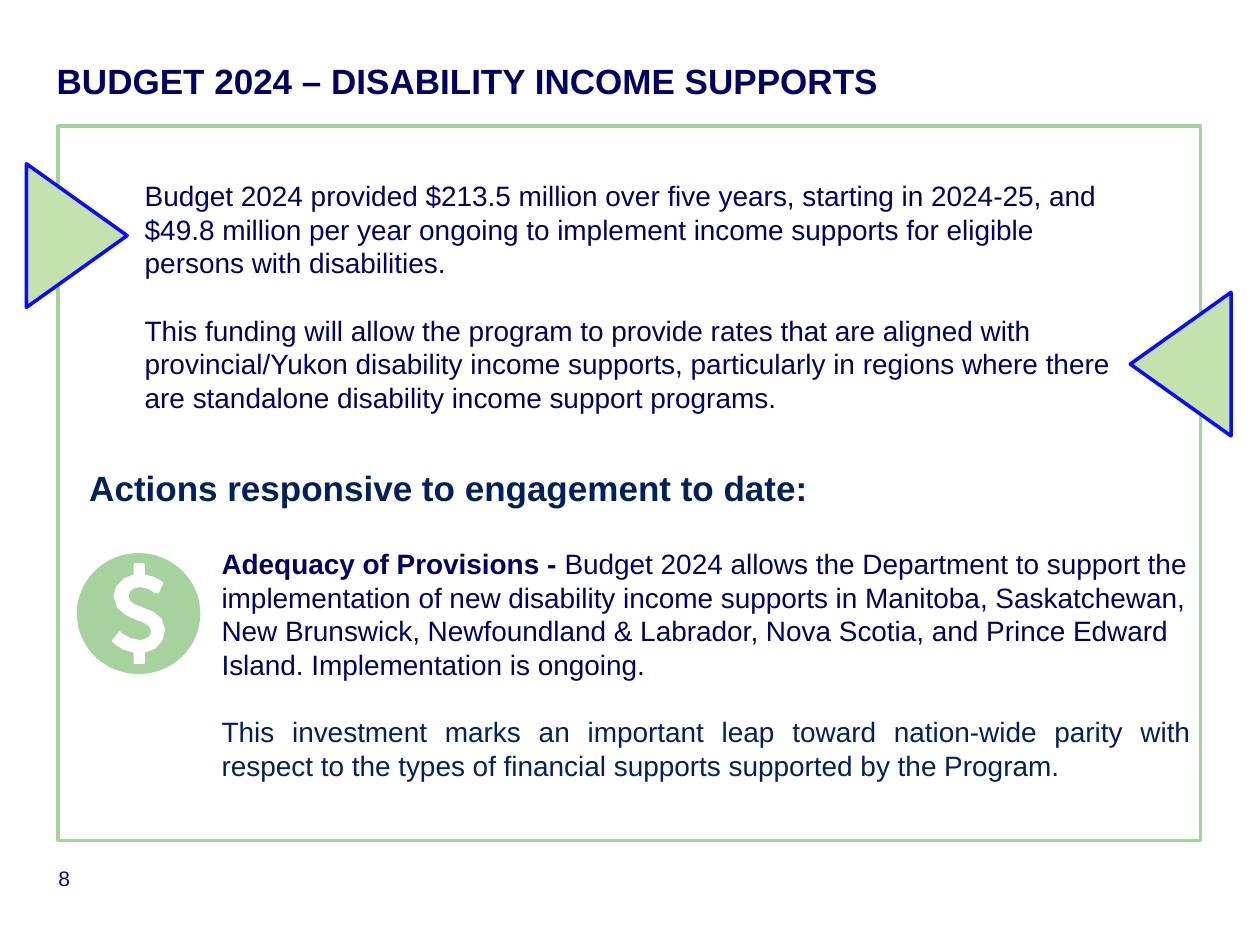
from pptx import Presentation
from pptx.dml.color import RGBColor
from pptx.enum import shapes, text
from pptx.util import Inches, Pt

NAVY, DEEP, GREEN = "000066", "002060", "A6D39D"
SHAPE = shapes.MSO_SHAPE

# Outline of the dollar sign: a pair is a line end, six numbers are a curve
START = (1.15, 5.18)
DOLLAR = [
    (1.15, 5.26), (1.15, 5.27, 1.14, 5.27, 1.13, 5.27), (1.08, 5.27),
    (1.07, 5.27, 1.06, 5.27, 1.06, 5.26), (1.06, 5.18),
    (0.96, 5.17, 0.9, 5.1, 0.9, 5.1), (0.89, 5.1, 0.89, 5.09, 0.89, 5.08),
    (0.94, 5.02), (0.94, 5.02, 0.95, 5.01, 0.95, 5.01),
    (0.96, 5.01, 0.96, 5.02, 0.96, 5.02), (0.96, 5.02, 1.03, 5.08, 1.11, 5.08),
    (1.15, 5.08, 1.2, 5.06, 1.2, 5.01), (1.2, 4.96, 1.14, 4.94, 1.08, 4.92),
    (1, 4.89, 0.9, 4.84, 0.9, 4.73), (0.9, 4.65, 0.97, 4.58, 1.06, 4.56),
    (1.06, 4.48), (1.06, 4.47, 1.07, 4.47, 1.08, 4.47), (1.13, 4.47),
    (1.14, 4.47, 1.15, 4.47, 1.15, 4.48), (1.15, 4.56),
    (1.24, 4.57, 1.29, 4.62, 1.29, 4.62), (1.3, 4.63, 1.3, 4.63, 1.29, 4.64),
    (1.26, 4.71), (1.25, 4.71), (1.23, 4.71),
    (1.23, 4.71, 1.18, 4.66, 1.11, 4.66), (1.06, 4.66, 1.02, 4.69, 1.02, 4.73),
    (1.02, 4.78, 1.07, 4.8, 1.13, 4.82), (1.22, 4.85, 1.31, 4.89, 1.31, 5),
    (1.31, 5.09, 1.24, 5.17, 1.15, 5.18),
]


def color(code):
    return RGBColor.from_string(code)


def trace(start, parts, steps=3):
    """Turn lines and Bezier curves into a list of points."""
    points = [start]
    for part in parts:
        if len(part) == 2:
            points.append(part)
            continue
        knots = [points[-1], part[:2], part[2:4], part[4:]]
        for step in range(1, steps + 1):
            t = step / steps
            w = ((1 - t) ** 3, 3 * t * (1 - t) ** 2, 3 * t * t * (1 - t), t ** 3)
            points.append(tuple(sum(a * k[i] for a, k in zip(w, knots)) for i in (0, 1)))
    return points


class Page:
    font = "Arial"

    def __init__(self, deck):
        self.slide = deck.slides.add_slide(deck.slide_layouts[6])

    def paint(self, shape, fill=None, line=None):
        shape.shadow.inherit = False
        if fill:
            shape.fill.solid()
            shape.fill.fore_color.rgb = color(fill)
        else:
            shape.fill.background()
        if line:
            shape.line.color.rgb = color(line)
            shape.line.width = Pt(2)
        else:
            shape.line.fill.background()
        return shape

    def shape(self, kind, box, fill=None, line=None):
        item = self.slide.shapes.add_shape(kind, *map(Inches, box))
        return self.paint(item, fill, line)

    def arrow(self, x, y, turn=0):
        item = self.shape(SHAPE.PENTAGON, (x, y, 0.8, 1.14), "C4E2AE", "0A0AFF")
        item.adjustments[0] = 1
        item.rotation = turn

    def outline(self, points, fill):
        spots = [(Inches(x), Inches(y)) for x, y in points]
        draw = self.slide.shapes.build_freeform(*spots[0])
        draw.add_line_segments(spots[1:], close=True)
        self.paint(draw.convert_to_shape(), fill)

    def text(self, box, paras, size=16, gap=0):
        """Each paragraph is a list of (words, colour, bold) runs."""
        frame = self.slide.shapes.add_textbox(*map(Inches, box)).text_frame
        frame.word_wrap = True
        for i, runs in enumerate(paras):
            para = frame.add_paragraph() if i else frame.paragraphs[0]
            if i:
                para.space_before = Pt(gap)
            for words, tint, bold in runs:
                run = para.add_run()
                run.text = words
                run.font.name = self.font
                run.font.size = Pt(size)
                run.font.bold = bold
                run.font.color.rgb = color(tint)
        return frame


def main():
    deck = Presentation()
    deck.slide_width, deck.slide_height = Inches(10), Inches(7.5)
    page = Page(deck)
    blank = 19.2  # height of one 16 pt line

    number = page.text((0.04, 6.82, 0.94, 0.3), [[("8", "0000A3", False)]], 12)
    number.paragraphs[0].alignment = text.PP_ALIGN.CENTER

    title = page.text((0.45, 0.47, 9.07, 0.64),
                      [[("BUDGET 2024 – DISABILITY INCOME SUPPORTS", NAVY, True)]], 20)
    title.margin_left = title.margin_right = title.margin_top = title.margin_bottom = 0
    title.paragraphs[0].line_spacing = Pt(24)

    page.shape(SHAPE.RECTANGLE, (0.46, 1, 9.07, 5.67), line=GREEN)
    page.arrow(0.21, 1.3)
    page.arrow(8.97, 2.32, 180)

    page.text((1.05, 1.37, 7.92, 1.99), [
        [("Budget 2024 provided $213.5 million over five years, starting in 2024-25, "
          "and $49.8 million per year ongoing to implement income supports for "
          "eligible persons with disabilities.", NAVY, False)],
        [("This funding will allow the program to provide rates that are aligned with "
          "provincial/Yukon disability income supports, particularly in regions where "
          "there are standalone disability income support programs.", NAVY, False)],
    ], gap=blank)

    detail = page.text((1.66, 4.29, 7.89, 1.99), [
        [("Adequacy of Provisions - ", NAVY, True),
         ("Budget 2024 allows the Department to support the implementation of new "
          "disability income supports in Manitoba, Saskatchewan, New Brunswick, "
          "Newfoundland & Labrador, Nova Scotia, and Prince Edward Island. "
          "Implementation is ongoing.", NAVY, False)],
        [("This investment marks an important leap toward nation-wide parity with "
          "respect to the types of financial supports supported by the Program.",
          DEEP, False)],
    ], gap=blank)
    detail.paragraphs[1].alignment = text.PP_ALIGN.JUSTIFY

    page.shape(SHAPE.OVAL, (0.61, 4.39, 0.98, 0.96), GREEN)
    page.outline(trace(START, DOLLAR), "FFFFFF")
    page.text((0.61, 3.65, 6.48, 0.44),
              [[("Actions responsive to engagement to date:", DEEP, True)]], 20)

    deck.save("out.pptx")


if __name__ == "__main__":
    main()
